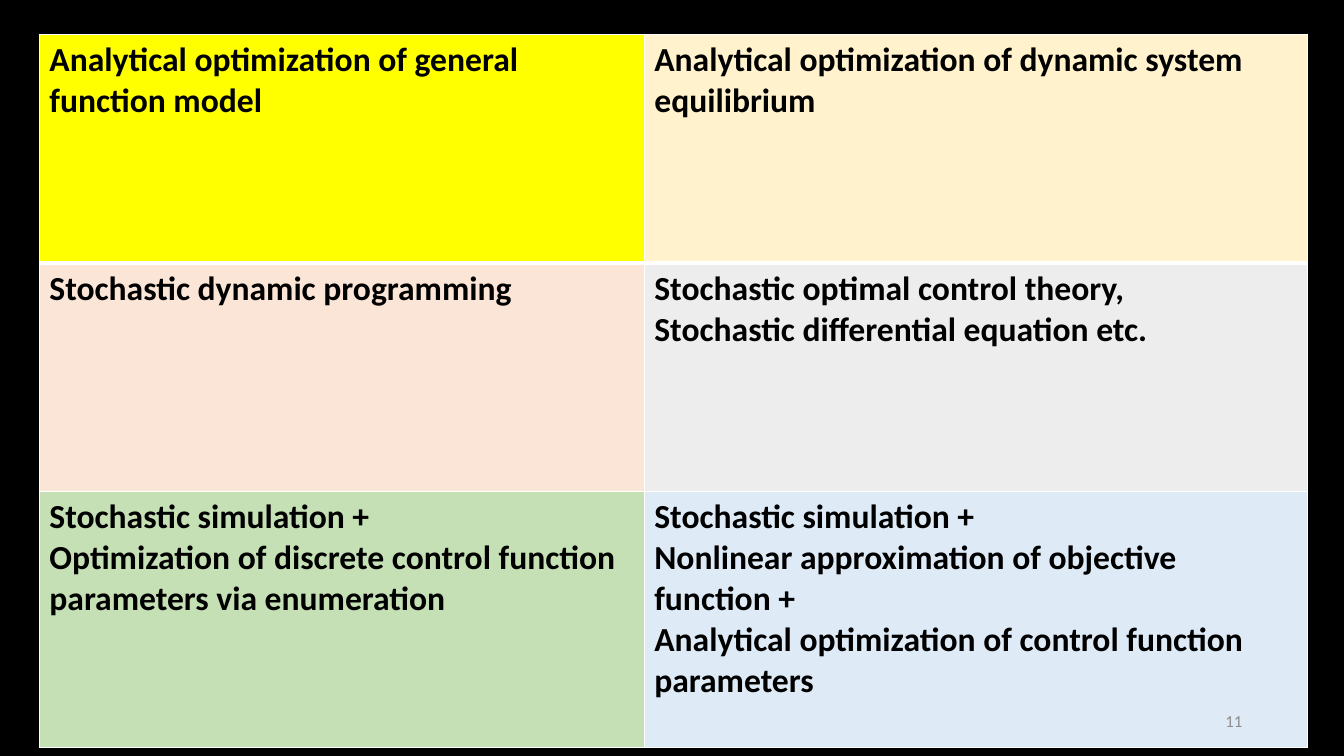
"""Build a slide with a grid of six optimization approaches on black."""
from lxml import etree
from pptx import Presentation, util as u
from pptx.dml.color import RGBColor
from pptx.enum import text
from pptx.oxml import ns

BLACK = RGBColor(0x00, 0x00, 0x00)
GREY = RGBColor(0x8C, 0x8C, 0x8C)
YELLOW = RGBColor(0xFF, 0xFF, 0x00)
CREAM = RGBColor(0xFF, 0xF2, 0xCC)
PEACH = RGBColor(0xFB, 0xE5, 0xD6)
SILVER = RGBColor(0xED, 0xED, 0xED)
GREEN = RGBColor(0xC5, 0xE0, 0xB4)
BLUE = RGBColor(0xDE, 0xEB, 0xF7)
WHITE = RGBColor(0xFF, 0xFF, 0xFF)

METHOD_FORMAT = {"name": "Calibri", "size": u.Pt(24), "bold": True}
NUMBER_FORMAT = {"name": "Calibri", "size": u.Pt(12), "bold": False}
COLUMN_WIDTHS = [6, 6.58]
ROW_HEIGHTS = [2.27, 2.27, 2.54]
APPROACHES = [
    [(YELLOW, ["Analytical optimization of general function model"]),
     (CREAM, ["Analytical optimization of dynamic system", "equilibrium"])],
    [(PEACH, ["Stochastic dynamic programming"]),
     (SILVER, ["Stochastic optimal control theory,",
               "Stochastic differential equation etc."])],
    [(GREEN, ["Stochastic simulation +",
              "Optimization of discrete control function parameters via enumeration"]),
     (BLUE, ["Stochastic simulation +",
             "Nonlinear approximation of objective function +",
             "Analytical optimization of control function parameters"])],
]


def write_lines(frame, lines, font_format, color):
    """Fill a text frame with one formatted paragraph per line."""
    frame.text = "\n".join(lines)
    for paragraph in frame.paragraphs:
        for key, value in font_format.items():
            setattr(paragraph.font, key, value)
        paragraph.font.color.rgb = color


def draw_border(cell, side, points):
    """Add a solid white line to one side of a cell."""
    line = etree.SubElement(cell._tc.get_or_add_tcPr(), ns.qn(f"a:ln{side}"),
                            w=str(u.Pt(points)))
    fill = etree.SubElement(line, ns.qn("a:solidFill"))
    etree.SubElement(fill, ns.qn("a:srgbClr"), val=str(WHITE))


prs = Presentation()
prs.slide_width, prs.slide_height = u.Inches(13.33), u.Inches(7.5)
slide = prs.slides.add_slide(prs.slide_layouts[6])
slide.background.fill.solid()
slide.background.fill.fore_color.rgb = BLACK

approach_grid = slide.shapes.add_table(
    len(ROW_HEIGHTS), len(COLUMN_WIDTHS), u.Inches(0.39), u.Inches(0.34),
    u.Inches(sum(COLUMN_WIDTHS)), u.Inches(sum(ROW_HEIGHTS))).table
approach_grid.first_row = approach_grid.horz_banding = False
for column, width in zip(approach_grid.columns, COLUMN_WIDTHS):
    column.width = u.Inches(width)
for row, height in zip(approach_grid.rows, ROW_HEIGHTS):
    row.height = u.Inches(height)

for r, row_approaches in enumerate(APPROACHES):
    for c, (color, lines) in enumerate(row_approaches):
        cell = approach_grid.cell(r, c)
        write_lines(cell.text_frame, lines, METHOD_FORMAT, BLACK)
        for side in "LRTB":
            below_first_row = (r, side) in [(0, "B"), (1, "T")]
            draw_border(cell, side, 3 if below_first_row else 1)
        cell.fill.solid()
        cell.fill.fore_color.rgb = color

page_number = slide.shapes.add_textbox(
    u.Inches(9.42), u.Inches(6.95), u.Inches(3), u.Inches(0.4)).text_frame
page_number.word_wrap = True
page_number.vertical_anchor = text.MSO_ANCHOR.MIDDLE
write_lines(page_number, ["11"], NUMBER_FORMAT, GREY)
page_number.paragraphs[0].alignment = text.PP_ALIGN.RIGHT

prs.save("out.pptx")
